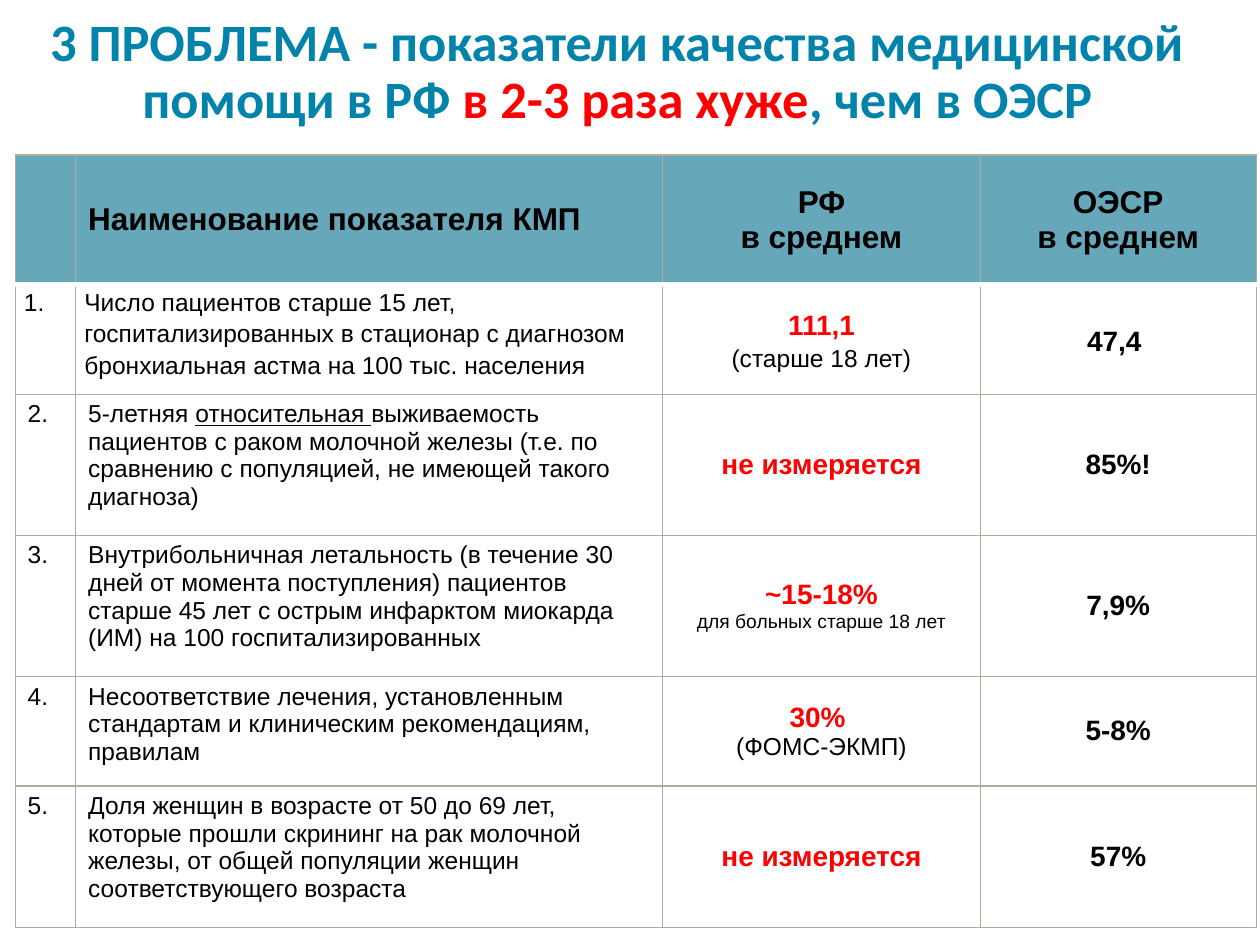
from lxml import etree
from pptx import Presentation, util as u
from pptx.dml.color import RGBColor
from pptx.enum import text
from pptx.oxml import ns

COLORS = {"title": "0183AB", "alert": "FF0000", "ink": "000000",
          "header": "66A7B9", "white": "FFFFFF", "grid": "AEAC9F"}

# Run styles: size, colour, bold, underline
STYLES = {
    "title": (30, "title", True, False),
    "title_alert": (30, "alert", True, False),
    "head": (18, "ink", True, False),
    "body": (14, "ink", False, False),
    "underlined": (14, "ink", False, True),
    "bad": (16, "alert", True, False),
    "good": (16, "ink", True, False),
    "small": (11, "ink", False, False),
}
BREAK = ("\n", None)

# Content: a cell is a list of paragraphs, a paragraph a list of (text, style)
TITLE = [("3 ПРОБЛЕМА - показатели качества медицинской помощи в РФ ", "title"),
         ("в 2-3 раза хуже", "title_alert"), (", чем в ОЭСР", "title")]
NOT_MEASURED = [[("не измеряется", "bad")]]
HEADER = [
    [],
    [[("Наименование показателя КМП", "head")]],
    [[("РФ", "head")], [("в среднем", "head")]],
    [[("ОЭСР", "head")], [("в среднем", "head")]],
]
# Indicator runs, Russian value, OECD value
INDICATORS = [
    ([("Число пациентов старше 15 лет, госпитализированных в стационар с диагнозом "
       "бронхиальная астма на 100 тыс. населения", "body")],
     [[("111,1", "bad")], [("(старше 18 лет)", "body")]], "47,4 "),
    ([("5-летняя ", "body"), ("относительная ", "underlined"),
      ("выживаемость пациентов с раком молочной железы (т.е. по сравнению с "
       "популяцией, не имеющей такого диагноза)", "body")],
     NOT_MEASURED, "85%!"),
    ([("Внутрибольничная летальность (в течение 30 дней от момента поступления) "
       "пациентов старше 45 лет с острым инфарктом миокарда (ИМ) на 100 "
       "госпитализированных", "body")],
     [[("~15-18%", "bad")], [("для больных старше 18 лет", "small")]], "7,9%"),
    ([("Несоответствие лечения, установленным стандартам и клиническим "
       "рекомендациям, правилам", "body")],
     [[("30% ", "bad"), BREAK, ("(ФОМС-ЭКМП)", "body")]], "5-8%"),
    ([("Доля женщин в возрасте от 50 до 69 лет, которые прошли скрининг на рак "
       "молочной железы, от общей популяции женщин соответствующего возраста", "body")],
     NOT_MEASURED, "57%"),
]
COLUMNS = [0.48, 4.66, 2.52, 2.19]
ROWS = [1.03, 0.87, 1.12, 1.12, 0.87, 1.12]


def write_runs(para, runs, font):
    for words, style in runs:
        if style is None:
            para.add_line_break()
            continue
        size, color, bold, underline = STYLES[style]
        span = para.add_run()
        span.text = words
        span.font.name = font
        span.font.size = u.Pt(size)
        span.font.bold = bold
        span.font.underline = underline
        span.font.color.rgb = RGBColor.from_string(COLORS[color])


def add_border(cell, side, color, width):
    line = etree.SubElement(cell._tc.get_or_add_tcPr(), ns.qn(f"a:ln{side}"),
                            w=str(u.Pt(width)))
    fill = etree.SubElement(line, ns.qn("a:solidFill"))
    etree.SubElement(fill, ns.qn("a:srgbClr"), val=COLORS[color])


def fill_cell(cell, paragraphs, row, column):
    # Borders come before the fill; a thick white rule closes the header
    for side in "LRTB":
        under_header = (row, side) in ((0, "B"), (1, "T"))
        add_border(cell, side, *(("white", 3) if under_header else ("grid", 0.75)))
    cell.fill.solid()
    cell.fill.fore_color.rgb = RGBColor.from_string(COLORS["white" if row else "header"])

    first_indicator = row == 1
    if first_indicator:
        cell.margin_left = cell.margin_right = u.Inches(0.07)
        cell.margin_top = cell.margin_bottom = 0
    if row == 0 or column > 1:
        cell.vertical_anchor = text.MSO_ANCHOR.MIDDLE
    frame = cell.text_frame
    for index, runs in enumerate(paragraphs):
        para = frame.add_paragraph() if index else frame.paragraphs[0]
        if column > 1:
            para.alignment = text.PP_ALIGN.CENTER
        if first_indicator:
            para.line_spacing = 1.15
        write_runs(para, runs, "Arial")


def main():
    deck = Presentation()
    deck.slide_width, deck.slide_height = u.Inches(10), u.Inches(7.5)
    page = deck.slides.add_slide(deck.slide_layouts[5])

    # Title
    title = page.shapes.title
    title.left, title.top, title.width, title.height = map(u.Inches, (0.18, 0.21, 9.64, 0.87))
    frame = title.text_frame
    frame.auto_size = text.MSO_AUTO_SIZE.NONE
    frame.word_wrap = True
    frame.vertical_anchor = text.MSO_ANCHOR.BOTTOM
    frame.margin_left = frame.margin_top = frame.margin_bottom = u.Inches(0.05)
    frame.margin_right = u.Inches(0.25)
    para = frame.paragraphs[0]
    para.alignment = text.PP_ALIGN.CENTER
    para.line_spacing = 0.9
    write_runs(para, TITLE, "Calibri")

    # Table of indicators
    table = page.shapes.add_table(len(ROWS), len(COLUMNS), u.Inches(0.12), u.Inches(1.23),
                                  u.Inches(sum(COLUMNS)), u.Inches(sum(ROWS))).table
    for column, width in zip(table.columns, COLUMNS):
        column.width = u.Inches(width)
    for row, height in zip(table.rows, ROWS):
        row.height = u.Inches(height)

    grid = [HEADER] + [
        [[[(f"{number}.", "body")]], [name], russia, [[(oecd, "good")]]]
        for number, (name, russia, oecd) in enumerate(INDICATORS, 1)]
    for row, cells in enumerate(grid):
        for column, paragraphs in enumerate(cells):
            fill_cell(table.cell(row, column), paragraphs, row, column)

    deck.save("out.pptx")


if __name__ == "__main__":
    main()
